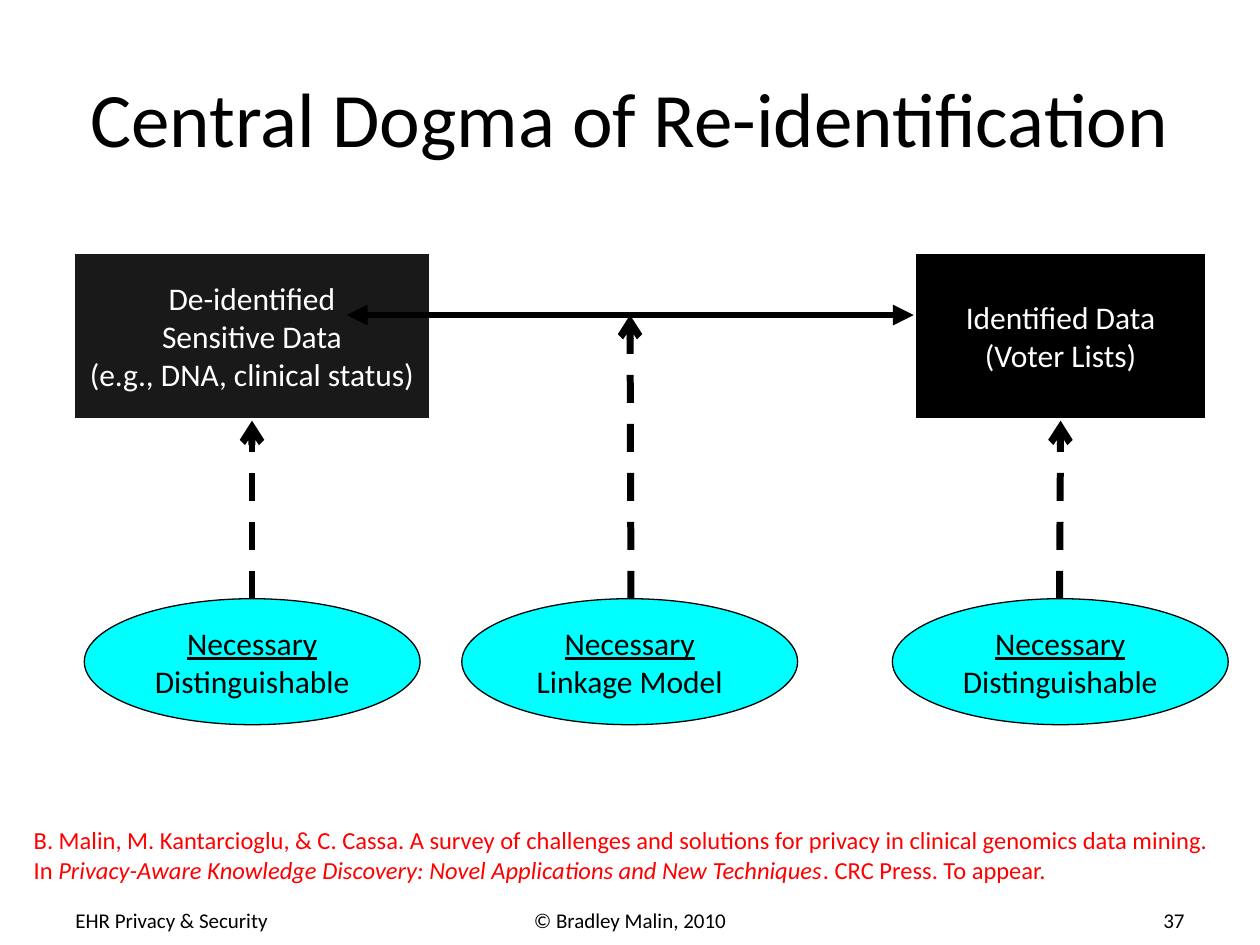
import pptx
import pptx.dml.color
import pptx.enum.dml
import pptx.enum.shapes
import pptx.enum.text
import pptx.oxml
import pptx.oxml.ns
import pptx.util
from lxml import etree

Cm = pptx.util.Cm
Pt = pptx.util.Pt
Align = pptx.enum.text.PP_ALIGN
Anchor = pptx.enum.text.MSO_ANCHOR
Shape = pptx.enum.shapes.MSO_SHAPE

BLACK, WHITE, CYAN, RED = "000000", "FFFFFF", "00FFFF", "FF0000"


def color(hex_value):
    return pptx.dml.color.RGBColor.from_string(hex_value)


def add_xml(parent, tag, **attributes):
    element = etree.SubElement(parent, pptx.oxml.ns.qn(tag))
    for name, value in attributes.items():
        element.set(name, value)
    return element


class DiagramSlide:
    font_name = "Calibri"

    def __init__(self, presentation):
        self.slide = presentation.slides.add_slide(presentation.slide_layouts[6])

    def fill_frame(self, frame, paragraphs, size, ink, align, anchor, wrap=True):
        frame_format = {"word_wrap": wrap, "vertical_anchor": anchor}
        for name, value in frame_format.items():
            setattr(frame, name, value)
        for index, runs in enumerate(paragraphs):
            paragraph = frame.paragraphs[0] if index == 0 else frame.add_paragraph()
            paragraph.alignment = align
            for words, extra in runs:
                run = paragraph.add_run()
                run.text = words
                run.font.color.rgb = color(ink)
                run_format = {"name": self.font_name, "size": Pt(size), **extra}
                for name, value in run_format.items():
                    setattr(run.font, name, value)

    def text(self, box, paragraphs, size, ink=BLACK, align=Align.LEFT, anchor=Anchor.MIDDLE):
        label = self.slide.shapes.add_textbox(*map(Cm, box))
        self.fill_frame(label.text_frame, paragraphs, size, ink, align, anchor)

    def node(self, kind, box, paragraphs, fill, border, border_width, ink, wrap=False, opacity=100):
        node = self.slide.shapes.add_shape(kind, *map(Cm, box))
        node.shadow.inherit = False
        node.fill.solid()
        node.fill.fore_color.rgb = color(fill)
        if opacity < 100:
            solid = node._element.spPr.find(pptx.oxml.ns.qn("a:solidFill"))
            add_xml(solid[0], "a:alpha", val=str(opacity * 1000))
        node.line.color.rgb = color(border)
        node.line.width = Pt(border_width)
        self.fill_frame(node.text_frame, paragraphs, 18, ink, Align.CENTER, Anchor.MIDDLE, wrap)

    def data_box(self, left, width, lines, **options):
        self.node(Shape.RECTANGLE, (left, 5.08, width, 3.38), [[(line, {})] for line in lines],
                  BLACK, WHITE, 2.25, WHITE, **options)

    def condition(self, left, requirement):
        paragraphs = [[("Necessary", {"underline": True})], [(requirement, {})]]
        self.node(Shape.OVAL, (left, 12.07, 6.77, 2.54), paragraphs, CYAN, BLACK, 0.75, BLACK)

    def arrow(self, start, end, dashed=False, **heads):
        straight = pptx.enum.shapes.MSO_CONNECTOR.STRAIGHT
        arrow = self.slide.shapes.add_connector(straight, *map(Cm, start + end))
        arrow.line.color.rgb = color(BLACK)
        arrow.line.width = Pt(4)
        if dashed:
            arrow.line.dash_style = pptx.enum.dml.MSO_LINE.DASH
        properties = arrow._element.spPr
        outline = properties.find(pptx.oxml.ns.qn("a:ln"))
        for name, head in heads.items():
            add_xml(outline, f"a:{name}", type=head)
        add_xml(properties, "a:effectLst")


def main():
    presentation = pptx.Presentation()
    presentation.slide_width = Cm(25.4)
    presentation.slide_height = Cm(19.05)
    diagram = DiagramSlide(presentation)

    diagram.text((1.27, 0.76, 22.86, 3.18), [[("Central Dogma of Re-identification", {})]],
                 44, align=Align.CENTER)

    diagram.data_box(1.48, 7.2, ["De-identified", "Sensitive Data", "(e.g., DNA, clinical status)"],
                     wrap=True, opacity=90)
    diagram.data_box(18.42, 5.92, ["Identified Data", "(Voter Lists)"])

    for left, requirement in [(1.7, "Distinguishable"), (17.99, "Distinguishable"),
                              (9.31, "Linkage Model")]:
        diagram.condition(left, requirement)

    diagram.arrow((6.99, 6.35), (18.42, 6.35), headEnd="triangle", tailEnd="triangle")
    for foot, tip, tip_height in [(21.36, 21.38, 8.48), (12.72, 12.7, 6.35), (5.08, 5.08, 8.48)]:
        diagram.arrow((foot, 12.07), (tip, tip_height), dashed=True, tailEnd="arrow")

    citation = [
        ("B. Malin, M. Kantarcioglu, & C. Cassa. A survey of challenges and solutions for privacy "
         "in clinical genomics data mining. In ", {}),
        ("Privacy-Aware Knowledge Discovery: Novel Applications and New Techniques", {"italic": True}),
        (". CRC Press. To appear.", {}),
    ]
    diagram.text((0.43, 16.51, 24.33, 1.45), [citation], 14, RED, anchor=Anchor.TOP)

    for left, width, words, align in [
        (1.27, 5.92, "EHR Privacy & Security", Align.LEFT),
        (8.68, 8.04, "© Bradley Malin, 2010", Align.CENTER),
        (18.21, 5.92, "37", Align.RIGHT),
    ]:
        diagram.text((left, 18.03, width, 1.02), [[(words, {})]], 12, align=align)

    presentation.save("out.pptx")


if __name__ == "__main__":
    main()
